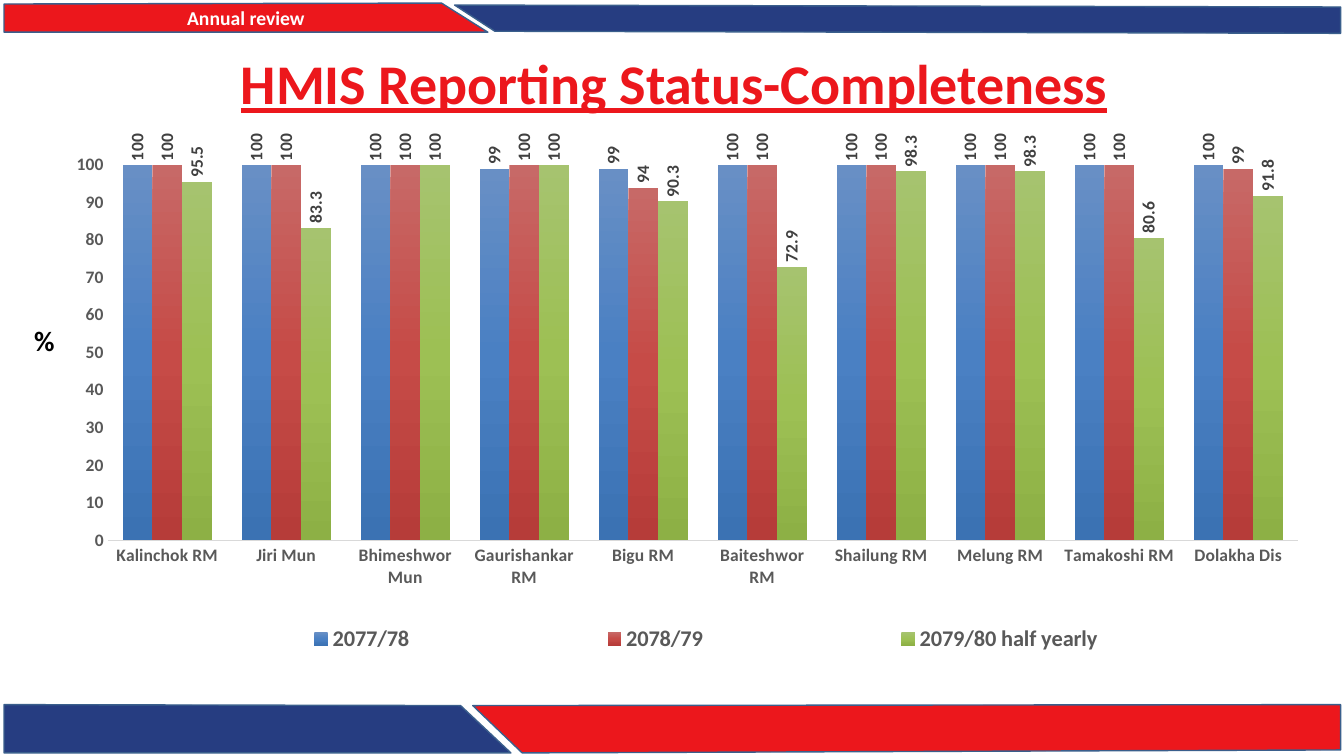
from pptx import Presentation
from pptx.chart.data import CategoryChartData
from pptx.dml.color import RGBColor
from pptx.enum.chart import XL_CHART_TYPE as CHART, XL_LABEL_POSITION as LABEL
from pptx.enum.chart import XL_LEGEND_POSITION as LEGEND, XL_TICK_MARK as TICK
from pptx.enum.text import MSO_ANCHOR as ANCHOR, PP_ALIGN as ALIGN
from pptx.oxml import parse_xml
from pptx.oxml.ns import nsdecls, qn
from pptx.util import Pt

FONT = "Calibri"
RED, NAVY, EDGE, GREY = "EC171C", "263D81", "3A5F8C", "595959"

TITLE = "HMIS Reporting Status-Completeness"
BANDS = [  # fill, text, corners
    (RED, "Annual review", [(2.9, 2.9), (315.4, 2.2), (348.5, 23), (2.9, 23)]),
    (NAVY, "", [(2.9, 503.3), (329, 504), (365, 537.8), (2.9, 537.8)]),
    (RED, "", [(337.7, 504), (957.6, 503.3), (957.6, 535.7), (373, 537.8)]),
    (NAVY, "", [(324.7, 3.6), (957.6, 5), (957.6, 23.8), (353.5, 22.3)]),
]
PLACES = ["Kalinchok RM", "Jiri Mun", "Bhimeshwor Mun", "Gaurishankar RM",
          "Bigu RM", "Baiteshwor RM", "Shailung RM", "Melung RM",
          "Tamakoshi RM", "Dolakha Dis"]
SERIES = [  # name, label format, gradient, values
    ("2077/78", "#,##0", ("688FC5", "4A80C3", "3B72B3"),
     (100, 100, 100, 99, 99, 100, 100, 100, 100, 100)),
    ("2078/79", "#,##0", ("C76967", "C64B47", "B63C39"),
     (100, 100, 100, 100, 94, 100, 100, 100, 100, 99)),
    ("2079/80 half yearly", "General", ("A6C36F", "9DC054", "8DB045"),
     (95.5, 83.3, 100, 100, 90.3, 72.9, 98.3, 98.3, 80.6, 91.8)),
]


def rgb(color):
    return RGBColor.from_string(color)


def style(font, size, color):
    font.name, font.size, font.bold = FONT, Pt(size), True
    font.color.rgb = rgb(color)


def add_band(slide, fill, text, corners):
    points = [(Pt(x), Pt(y)) for x, y in corners]
    builder = slide.shapes.build_freeform(*points[0])
    builder.add_line_segments(points[1:], close=True)
    sp = builder.convert_to_shape()
    sp.shadow.inherit = False
    sp.fill.solid()
    sp.fill.fore_color.rgb = rgb(fill)
    sp.line.color.rgb = rgb(EDGE)
    sp.line.width = Pt(1)
    if text:
        tf = sp.text_frame
        tf.text = text
        tf.vertical_anchor = ANCHOR.MIDDLE
        p = tf.paragraphs[0]
        p.alignment = ALIGN.CENTER
        style(p.runs[0].font, 14, "FFFFFF")


def layout_xml(x, y, w, h, inner=False):
    """Manual layout in fractions of the chart area."""
    target = '<c:layoutTarget val="inner"/>' if inner else ""
    return parse_xml(
        f'<c:layout {nsdecls("c")}><c:manualLayout>{target}'
        '<c:xMode val="edge"/><c:yMode val="edge"/>'
        f'<c:x val="{x}"/><c:y val="{y}"/><c:w val="{w}"/><c:h val="{h}"/>'
        '</c:manualLayout></c:layout>')


def drop_layout(element):
    for old in element.findall(qn("c:layout")):
        element.remove(old)


def gradient_xml(colors):
    """Even colour stops running from top to bottom."""
    step = 100000 // (len(colors) - 1)
    stops = "".join(f'<a:gs pos="{i * step}"><a:srgbClr val="{c}"/></a:gs>'
                    for i, c in enumerate(colors))
    return parse_xml(f'<a:gradFill {nsdecls("a")} rotWithShape="1"><a:gsLst>{stops}'
                     '</a:gsLst><a:lin ang="5400000" scaled="0"/></a:gradFill>')


def add_chart(slide):
    data = CategoryChartData()
    data.categories = PLACES
    for name, _, _, values in SERIES:
        data.add_series(name, values)
    chart = slide.shapes.add_chart(CHART.COLUMN_CLUSTERED, Pt(29.5), Pt(92.2),
                                   Pt(913), Pt(396), data).chart
    chart.has_title = False
    chart.font.name, chart.font.size = FONT, Pt(12.5)

    cat, val = chart.category_axis, chart.value_axis
    for axis in (cat, val):
        axis.major_tick_mark = axis.minor_tick_mark = TICK.NONE
        axis.has_major_gridlines = False
        style(axis.tick_labels.font, 12.5, GREY)
    cat.format.line.color.rgb = rgb("D9D9D9")
    cat.format.line.width = Pt(1)
    val.format.line.fill.background()
    val.minimum_scale, val.maximum_scale, val.major_unit = 0, 100, 10

    plot = chart.plots[0]
    plot.gap_width, plot.overlap = 100, 0
    plot.vary_by_categories = False
    for ser, (_, number_format, colors, _) in zip(plot.series, SERIES):
        ser.invert_if_negative = False
        ser._element.get_or_add_spPr().append(gradient_xml(colors))
        labels = ser.data_labels
        labels.show_value = True
        labels.position = LABEL.OUTSIDE_END
        labels.number_format = number_format
        labels.number_format_is_linked = False
        style(labels.font, 12.5, "404040")
        body = labels._element.find(qn("c:txPr")).find(qn("a:bodyPr"))
        body.set("rot", "-5400000")
        body.set("vert", "horz")

    chart.has_legend = True
    legend = chart.legend
    legend.position = LEGEND.BOTTOM
    legend.include_in_layout = False
    style(legend.font, 16, GREY)
    drop_layout(legend._element)
    legend._element.find(qn("c:legendPos")).addnext(
        layout_xml(0.064, 0.88, 0.912, 0.08))
    area = chart._chartSpace.chart.plotArea
    drop_layout(area)
    area.insert(0, layout_xml(0.052, 0.065, 0.931, 0.677, inner=True))


def main():
    prs = Presentation()
    prs.slide_width, prs.slide_height = Pt(960), Pt(540)
    slide = prs.slides.add_slide(prs.slide_layouts[5])

    for band in BANDS:
        add_band(slide, *band)

    title = slide.shapes.title
    title.left, title.top, title.width, title.height = Pt(46), Pt(31.7), Pt(871), Pt(60.5)
    tf = title.text_frame
    tf.text = TITLE
    tf.vertical_anchor = ANCHOR.MIDDLE
    p = tf.paragraphs[0]
    p.alignment, p.line_spacing = ALIGN.CENTER, 0.9
    style(p.runs[0].font, 40, RED)
    p.runs[0].font.underline = True

    add_chart(slide)

    unit = slide.shapes.add_textbox(Pt(17.3), Pt(227.5), Pt(29.5), Pt(31.7))
    unit.text_frame.text = "%"
    style(unit.text_frame.paragraphs[0].runs[0].font, 20, "000000")

    prs.save("out.pptx")


if __name__ == "__main__":
    main()
